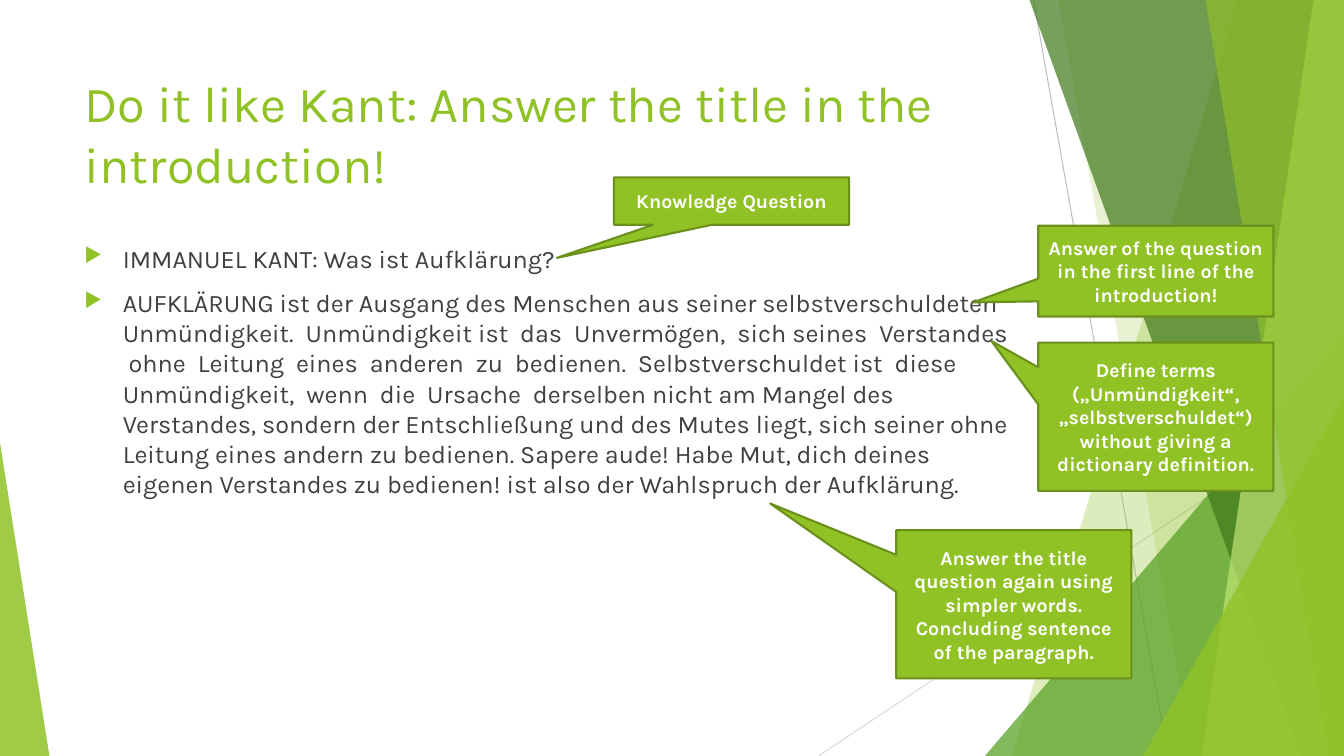
from dataclasses import dataclass
from typing import Union

from lxml.etree import SubElement
from pptx import Presentation
from pptx.dml.color import RGBColor
from pptx.enum.shapes import MSO_CONNECTOR, MSO_SHAPE
from pptx.enum.text import MSO_ANCHOR, PP_ALIGN
from pptx.oxml.ns import qn
from pptx.shapes.autoshape import Shape
from pptx.shapes.shapetree import SlideShapes
from pptx.text.text import TextFrame, _Paragraph
from pptx.util import Emu, Inches, Pt

WIDE, HIGH = Inches(13.33), Inches(7.5)
COLS = ROWS = 100
FONT = "Karla"

GREEN = RGBColor(0x90, 0xC2, 0x26)
OLIVE = RGBColor(0x6B, 0x90, 0x1C)
LEAF = RGBColor(0x54, 0xA0, 0x21)
FOREST = RGBColor(0x3F, 0x78, 0x19)
LIME = RGBColor(0xC0, 0xE4, 0x74)
SILVER = RGBColor(0xBF, 0xBF, 0xBF)
MIST = RGBColor(0xD9, 0xD9, 0xD9)
INK = RGBColor(0x40, 0x40, 0x40)
WHITE = RGBColor(0xFF, 0xFF, 0xFF)


@dataclass(frozen=True)
class Box:
    col: float
    row: float
    cols: float
    rows: float


@dataclass(frozen=True)
class Ray:
    start: tuple[float, float]
    end: tuple[float, float]
    color: RGBColor


@dataclass(frozen=True)
class Band:
    top: float
    foot: float
    color: RGBColor
    alpha: int


@dataclass(frozen=True)
class Wedge:
    box: Box
    peak: float
    color: RGBColor
    alpha: int


@dataclass(frozen=True)
class Callout:
    box: Box
    tip: tuple[float, float]
    text: str


RAYS = [
    Ray((76.9, 0), (86.9, ROWS), SILVER),
    Ray((COLS, 53.73), (60.9, ROWS), MIST),
]
FACETS: list[Union[Band, Wedge]] = [
    Band(92.1, 75.3, GREEN, 30),
    Band(78.75, 88.73, GREEN, 20),
    Wedge(Box(73.28, 44.4, 26.72, 55.6), 1, LEAF, 72),
    Band(76.6, 96.83, FOREST, 70),
    Band(97.73, 89.4, LIME, 70),
    Band(89.7, 98.85, GREEN, 65),
    Wedge(Box(85.05, 52.4, 14.95, 47.6), 1, GREEN, 80),
    Wedge(Box(0, 58.53, 3.68, 41.47), 0, GREEN, 85),
]
TITLE = "Do it like Kant: Answer the title in the introduction!"
POINTS = [
    "IMMANUEL KANT: Was ist Aufklärung?",
    "AUFKLÄRUNG ist der Ausgang des Menschen aus seiner selbstverschuldeten  "
    "Unmündigkeit.  Unmündigkeit ist  das  Unvermögen,  sich seines  Verstandes  "
    "ohne  Leitung  eines  anderen  zu  bedienen.  Selbstverschuldet ist  diese  "
    "Unmündigkeit,  wenn  die  Ursache  derselben nicht am Mangel des Verstandes, "
    "sondern der Entschließung und des Mutes liegt, sich seiner ohne Leitung eines "
    "andern zu bedienen. Sapere aude! Habe Mut, dich deines eigenen Verstandes zu "
    "bedienen! ist also der Wahlspruch der Aufklärung.",
]
CALLOUTS = [
    Callout(Box(45.68, 23.47, 17.5, 6.27), (-0.743, 1.199), "Knowledge Question"),
    Callout(Box(77.25, 29.87, 17.5, 12), (-0.776, 0.344),
            "Answer of the question in the first line of the introduction!"),
    Callout(Box(77.25, 45.33, 17.5, 19.6), (-0.699, -0.511),
            "Define terms („Unmündigkeit“, „selbstverschuldet“) "
            "without giving a dictionary definition."),
    Callout(Box(66.68, 70.13, 17.5, 19.6), (-1.036, -0.68),
            "Answer the title question again using simpler words. "
            "Concluding sentence of the paragraph."),
]


def across(cols: float) -> Emu:
    return Emu(round(WIDE * cols / COLS))


def down(rows: float) -> Emu:
    return Emu(round(HIGH * rows / ROWS))


def place(box: Box) -> tuple[Emu, Emu, Emu, Emu]:
    return across(box.col), down(box.row), across(box.cols), down(box.rows)


def write(para: _Paragraph, text: str, size: int, color: RGBColor, bold: bool = False) -> None:
    run = para.add_run()
    run.text = text
    run.font.name = FONT
    run.font.size = Pt(size)
    run.font.bold = bold
    run.font.color.rgb = color


def draw_ray(shapes: SlideShapes, ray: Ray) -> None:
    (left, top), (right, foot) = ray.start, ray.end
    line = shapes.add_connector(
        MSO_CONNECTOR.STRAIGHT, across(left), down(top), across(right), down(foot))
    line.line.color.rgb = ray.color
    line.line.width = Pt(0.75)
    SubElement(line.element.spPr, qn("a:effectLst"))


def tint(shape: Shape, color: RGBColor, alpha: int) -> None:
    shape.shadow.inherit = False
    shape.fill.solid()
    shape.fill.fore_color.rgb = color
    shape.line.fill.background()
    tone = shape.element.spPr.find(qn("a:solidFill")).find(qn("a:srgbClr"))
    SubElement(tone, qn("a:alpha")).set("val", str(alpha * 1000))


def draw_facet(shapes: SlideShapes, facet: Union[Band, Wedge]) -> None:
    if isinstance(facet, Band):
        pen = shapes.build_freeform(across(facet.top), 0)
        pen.add_line_segments(
            [(WIDE, 0), (WIDE, HIGH), (across(facet.foot), HIGH)], close=True)
        shape = pen.convert_to_shape()
    else:
        shape = shapes.add_shape(MSO_SHAPE.ISOSCELES_TRIANGLE, *place(facet.box))
        shape.adjustments[0] = facet.peak
    tint(shape, facet.color, facet.alpha)


def add_frame(shapes: SlideShapes, box: Box) -> TextFrame:
    frame = shapes.add_textbox(*place(box)).text_frame
    frame.word_wrap = True
    frame.vertical_anchor = MSO_ANCHOR.TOP
    return frame


def add_mark(para: _Paragraph) -> None:
    props = para._p.get_or_add_pPr()
    inset = Inches(0.38)
    props.set("marL", str(inset))
    props.set("indent", str(-inset))
    tone = SubElement(props, qn("a:buClr"))
    SubElement(tone, qn("a:srgbClr")).set("val", str(GREEN))
    SubElement(props, qn("a:buSzPct")).set("val", "80000")
    SubElement(props, qn("a:buChar")).set("char", "▶")


def draw_points(shapes: SlideShapes) -> None:
    frame = add_frame(shapes, Box(5.55, 31.47, 70.5, 56.53))
    for rank, text in enumerate(POINTS):
        para = frame.add_paragraph() if rank else frame.paragraphs[0]
        add_mark(para)
        if rank:
            para.space_before = Pt(10)
        write(para, text, 18, INK)


def draw_callout(shapes: SlideShapes, note: Callout) -> None:
    shape = shapes.add_shape(MSO_SHAPE.RECTANGULAR_CALLOUT, *place(note.box))
    shape.shadow.inherit = False
    shape.adjustments[0], shape.adjustments[1] = note.tip
    shape.fill.solid()
    shape.fill.fore_color.rgb = GREEN
    shape.line.color.rgb = OLIVE
    shape.line.width = Pt(1.5)
    frame = shape.text_frame
    frame.word_wrap = True
    frame.vertical_anchor = MSO_ANCHOR.MIDDLE
    para = frame.paragraphs[0]
    para.alignment = PP_ALIGN.CENTER
    write(para, note.text, 14, WHITE, bold=True)


def main() -> None:
    deck = Presentation()
    deck.slide_width, deck.slide_height = WIDE, HIGH
    shapes = deck.slides.add_slide(deck.slide_layouts[6]).shapes
    for ray in RAYS:
        draw_ray(shapes, ray)
    for facet in FACETS:
        draw_facet(shapes, facet)
    title = add_frame(shapes, Box(5.55, 8.93, 70.5, 19.2))
    write(title.paragraphs[0], TITLE, 36, GREEN)
    draw_points(shapes)
    for note in CALLOUTS:
        draw_callout(shapes, note)
    deck.save("out.pptx")


if __name__ == "__main__":
    main()
